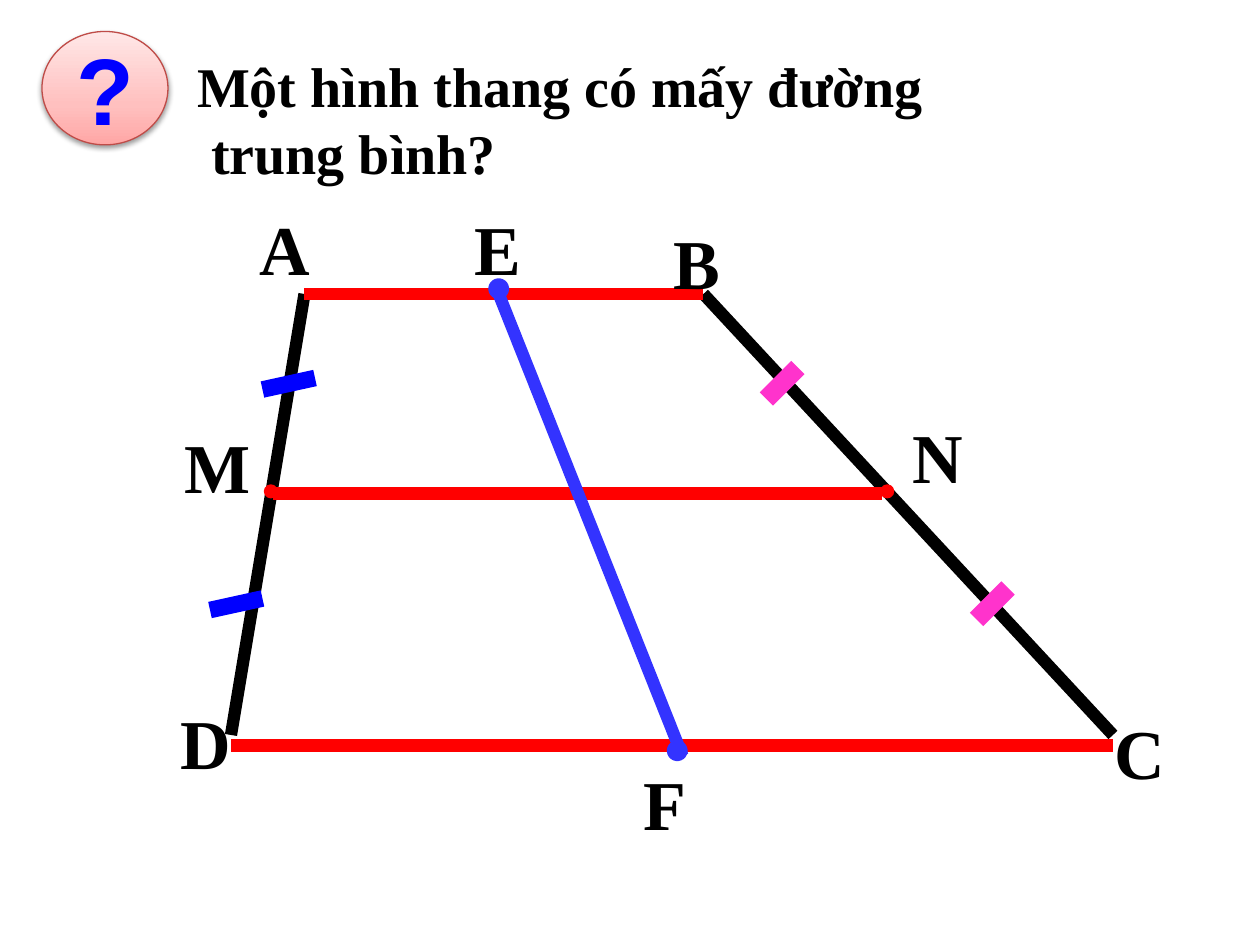
import copy

import lxml.etree
import pptx
import pptx.dml.color
import pptx.enum.shapes
import pptx.enum.text
import pptx.oxml
import pptx.oxml.ns
import pptx.util

COLUMNS, ROWS = 120, 90
SLIDE_WIDTH, SLIDE_HEIGHT = pptx.util.Inches(10), pptx.util.Inches(7.5)
COLORS = {
    "ink": "000000", "blue": "0000FF", "median": "3333FF", "red": "FF0000",
    "pink": "FF33CC", "rim": "BF4C48",
}
BADGE_STOPS = [(0, "FFA6A5"), (0.35, "FFC0BF"), (1, "FFE7E7")]
SERIF = "Times New Roman"
OVAL = pptx.enum.shapes.MSO_SHAPE.OVAL
A = pptx.oxml.ns.qn


def rgb(value):
    """Turn a hex string into a colour."""
    return pptx.dml.color.RGBColor.from_string(value)


def place(box, column, row):
    """Turn a grid point inside a box into slide lengths."""
    return (round((box[0] + column) * SLIDE_WIDTH / COLUMNS),
            round((box[1] + row) * SLIDE_HEIGHT / ROWS))


def area(box, column, row, width, height):
    """Turn a grid rectangle inside a box into left, top, width and height."""
    return *place(box, column, row), *place((0, 0), width, height)


def write(frame, lines, color="ink", **format_values):
    """Fill a text frame with bold lines of one format."""
    frame.text = "\n".join(lines)
    for para in frame.paragraphs:
        for span in para.runs:
            for name, value in {"bold": True, **format_values}.items():
                setattr(span.font, name, value)
            span.font.color.rgb = rgb(COLORS[color])


def add_text(page, bounds, lines, wrap=True, **format_values):
    """Add a text box that grows with its text."""
    frame = page.shapes.add_textbox(*bounds).text_frame
    write(frame, lines, **format_values)
    frame.word_wrap = wrap
    frame.auto_size = pptx.enum.text.MSO_AUTO_SIZE.SHAPE_TO_FIT_TEXT


def add_segment(page, box, start, end, color, weight):
    """Draw a straight segment between two grid points."""
    segment = page.shapes.add_connector(
        pptx.enum.shapes.MSO_CONNECTOR.STRAIGHT, *place(box, *start), *place(box, *end))
    segment.line.color.rgb = rgb(COLORS[color])
    segment.line.width = pptx.util.Pt(weight)
    lxml.etree.SubElement(segment.element.spPr, A("a:effectLst"))


def add_dot(page, box, center, color, weight):
    """Draw a one-cell dot centred on a grid point."""
    dot = page.shapes.add_shape(OVAL, *area(box, center[0] - 0.5, center[1] - 0.5, 1, 1))
    dot.shadow.inherit = False
    dot.fill.solid()
    dot.fill.fore_color.rgb = rgb(COLORS[color])
    dot.line.color.rgb = rgb(COLORS[color])
    dot.line.width = pptx.util.Pt(weight)


def add_badge(page, bounds):
    """Draw the shaded question mark badge."""
    badge = page.shapes.add_shape(OVAL, *bounds)
    badge.fill.gradient()
    badge.fill.gradient_angle = 90
    stops = badge.element.spPr.find(".//" + A("a:gsLst"))
    stops.insert(1, copy.deepcopy(stops[0]))
    for stop, (position, color) in zip(badge.fill.gradient_stops, BADGE_STOPS):
        stop.position = position
        stop.color.rgb = rgb(color)
    badge.line.color.rgb = rgb(COLORS["rim"])
    badge.line.width = pptx.util.Pt(0.75)
    badge.shadow.inherit = False
    badge.element.spPr.find(A("a:effectLst")).append(pptx.oxml.parse_xml(
        f'<a:outerShdw {pptx.oxml.ns.nsdecls("a")} blurRad="{pptx.util.Pt(3.1)}" '
        f'dist="{pptx.util.Pt(1.6)}" dir="5400000" rotWithShape="0">'
        f'<a:srgbClr val="{COLORS["ink"]}"><a:alpha val="38000"/></a:srgbClr></a:outerShdw>'))
    write(badge.text_frame, ["?"], "blue", size=pptx.util.Pt(54), name="Arial")
    badge.text_frame.vertical_anchor = pptx.enum.text.MSO_ANCHOR.MIDDLE
    badge.text_frame.paragraphs[0].alignment = pptx.enum.text.PP_ALIGN.CENTER


def add_question(page, box):
    """Place the badge and the question beside it."""
    add_badge(page, area(box, 0, 0, 12, 10.8))
    add_text(page, area(box, 13.6, 1.3, 98.4, 14.2),
             ["Một hình thang có mấy đường", " trung bình?"],
             size=pptx.util.Pt(32), name=SERIF)


def add_trapezoid(page, box):
    """Draw the trapezoid with its midlines, tick marks and point names."""
    for start, end in [((14, 10), (7, 52)), ((52, 10), (91, 52))]:
        add_segment(page, box, start, end, "ink", 7)
    for center in [(10.8, 28.8), (69.5, 28.8)]:
        add_dot(page, box, center, "red", 2)
    ticks = [((15, 18), (10, 19.1), -5, "blue", 9.5),
             ((58, 20), (61, 17), 20, "pink", 10.75)]
    for start, end, shift, color, weight in ticks:
        for step in range(2):
            first, last = ((column + step * shift, row + step * 21)
                           for column, row in (start, end))
            add_segment(page, box, first, last, color, weight)
    for left, right, row in [(14, 52, 10), (7, 91, 53), (11, 69, 29)]:
        add_segment(page, box, (left, row), (right, row), "red", 7)
    names = {
        "A": (8.5, 1, 8), "B": (48, 2.3, 8), "C": (90, 49, 8), "D": (1, 48, 8),
        "M": (1.4, 21.7, 8.8), "N": (70.7, 20.8, 7.3),
        "E": (29, 1, 7), "F": (45.1, 53.8, 6.5),
    }
    for name, (column, row, width) in names.items():
        add_text(page, area(box, column, row, width, 9.2), [name], name in "ABCD",
                 size=pptx.util.Pt(40), name=SERIF)
    for center in [(32.5, 9.5), (49.5, 53.5)]:
        add_dot(page, box, center, "median", 6)
    add_segment(page, box, (32.5, 10), (50, 54), "median", 7)


def main():
    """Build the slide and save it."""
    deck = pptx.Presentation()
    deck.slide_width, deck.slide_height = SLIDE_WIDTH, SLIDE_HEIGHT
    page = deck.slides.add_slide(deck.slide_layouts[6])
    add_question(page, (4, 3))
    add_trapezoid(page, (15, 18))
    deck.save("out.pptx")


if __name__ == "__main__":
    main()
